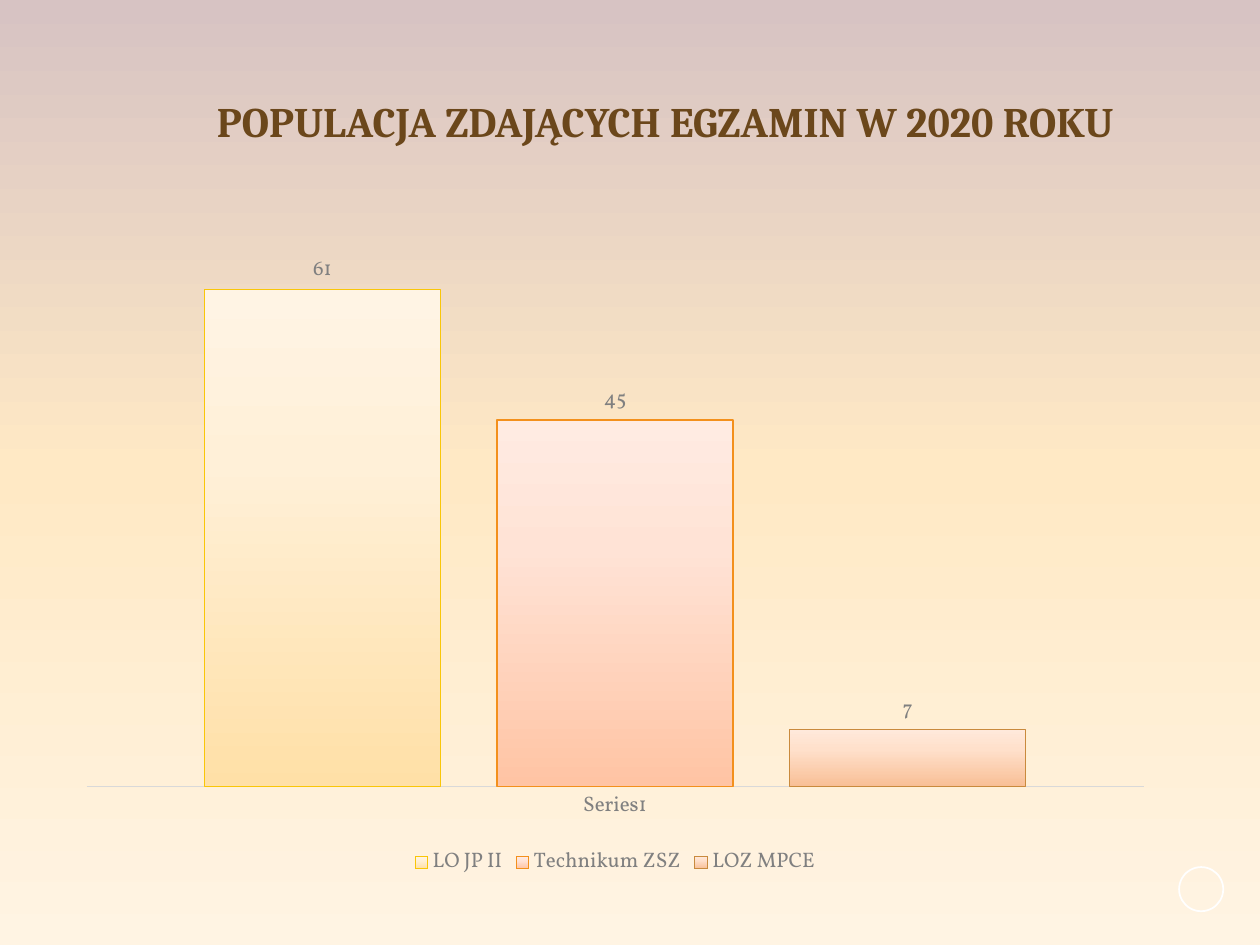
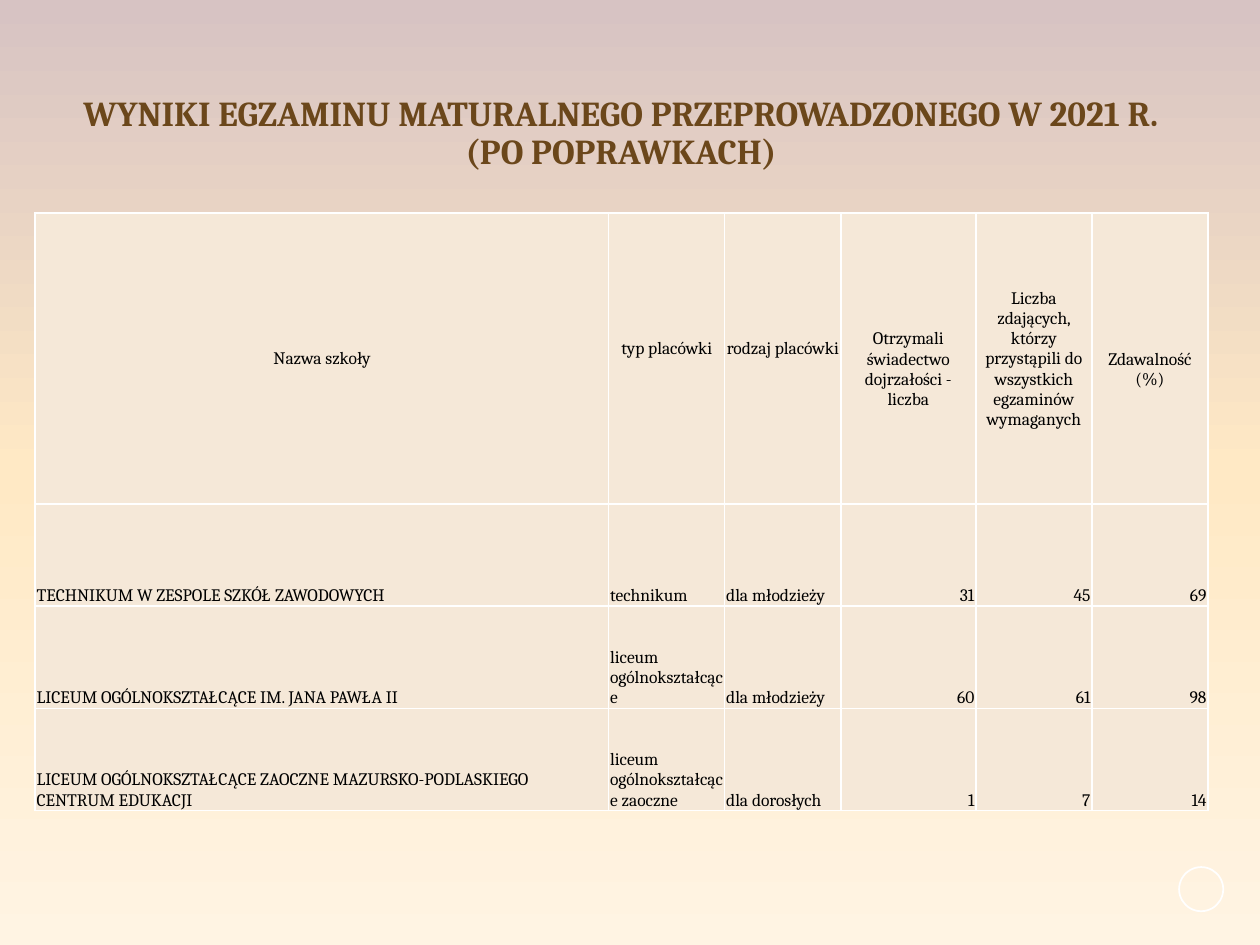
from dataclasses import dataclass

from lxml.etree import SubElement
from pptx import Presentation
from pptx.chart.data import CategoryChartData
from pptx.dml.color import RGBColor
from pptx.enum.chart import XL_CHART_TYPE, XL_LABEL_POSITION, XL_LEGEND_POSITION, XL_TICK_LABEL_POSITION, XL_TICK_MARK
from pptx.enum.shapes import MSO_SHAPE
from pptx.enum.text import MSO_ANCHOR, MSO_AUTO_SIZE, PP_ALIGN
from pptx.oxml.ns import qn
from pptx.util import Cm, Pt

# Shared look
BROWN = RGBColor(0x6B, 0x47, 0x1B)
WHITE = RGBColor(0xFF, 0xFF, 0xFF)
BLACK = RGBColor(0x00, 0x00, 0x00)
GREY = RGBColor(0x80, 0x80, 0x80)
AXIS_GREY = RGBColor(0xD9, 0xD9, 0xD9)
CELL_CREAM = RGBColor(0xF5, 0xE8, 0xD8)
MAUVE = RGBColor(0xD7, 0xC3, 0xC3)
PEACH = RGBColor(0xFF, 0xE9, 0xC5)
CREAM = RGBColor(0xFF, 0xF4, 0xE3)
TEXT_FONT = "Cambria"
CHART_FONT = "Vollkorn"
CELL_MARGIN = Cm(0.03)
LINE_HEIGHT = Cm(0.42)


@dataclass(frozen=True)
class School:
    name: str
    candidates: int
    outline: RGBColor
    shades: tuple[RGBColor, RGBColor, RGBColor]


@dataclass(frozen=True)
class Column:
    heading: str
    width: float
    align: PP_ALIGN
    lines_above: int = 0
    lines_below: int = 0


SCHOOLS = [
    School("LO JP II", 61, RGBColor(0xF9, 0xC6, 0x08),
           (RGBColor(0xFF, 0xE0, 0xA7), RGBColor(0xFF, 0xF0, 0xD8), RGBColor(0xFF, 0xF4, 0xE4))),
    School("Technikum ZSZ", 45, RGBColor(0xF3, 0x90, 0x1C),
           (RGBColor(0xFF, 0xC4, 0xA4), RGBColor(0xFF, 0xE3, 0xD6), RGBColor(0xFF, 0xEB, 0xE2))),
    School("LOZ MPCE", 7, RGBColor(0xC9, 0x8A, 0x3D),
           (RGBColor(0xF8, 0xBF, 0x96), RGBColor(0xFF, 0xE0, 0xCB), RGBColor(0xFF, 0xE9, 0xDB))),
]

COLUMNS = [
    Column("Nazwa szkoły", 11.56, PP_ALIGN.LEFT),
    Column("typ placówki", 2.34, PP_ALIGN.LEFT, lines_below=1),
    Column("rodzaj placówki", 2.34, PP_ALIGN.LEFT, lines_below=1),
    Column("Otrzymali świadectwo dojrzałości - liczba", 2.72, PP_ALIGN.RIGHT, lines_above=1),
    Column("Liczba zdających, którzy przystąpili do wszystkich egzaminów wymaganych",
           2.34, PP_ALIGN.RIGHT),
    Column("Zdawalność (%)", 2.34, PP_ALIGN.RIGHT, lines_above=1),
]

RESULTS = [
    ("TECHNIKUM W ZESPOLE SZKÓŁ ZAWODOWYCH", "technikum", "dla młodzieży", 31, 45, 69),
    ("LICEUM OGÓLNOKSZTAŁCĄCE IM. JANA PAWŁA II", "liceum ogólnokształcące",
     "dla młodzieży", 60, 61, 98),
    ("LICEUM OGÓLNOKSZTAŁCĄCE ZAOCZNE MAZURSKO-PODLASKIEGO CENTRUM EDUKACJI",
     "liceum ogólnokształcące zaoczne", "dla dorosłych", 1, 7, 14),
]


def set_gradient(fill, owner, angle: int, middle: int, shades) -> None:
    """Fill with three shades; the middle one sits at the given percentage."""
    fill.gradient()
    fill.gradient_angle = angle
    stops = next(owner.iter(qn("a:gsLst")))
    for stop in list(stops):
        stops.remove(stop)
    for percent, shade in zip((0, middle, 100), shades):
        stop = SubElement(stops, qn("a:gs"), pos=str(percent * 1000))
        SubElement(stop, qn("a:srgbClr"), val=str(shade))


def style_font(font, name: str, size: int, color: RGBColor, bold: bool = False) -> None:
    font.name = name
    font.size = Pt(size)
    font.bold = bold
    font.color.rgb = color


def add_titled_slide(prs, title_text: str, left: float, top: float, size: int):
    slide = prs.slides.add_slide(prs.slide_layouts[5])
    # Corner ring
    ring = slide.shapes.add_shape(MSO_SHAPE.OVAL, Cm(23.77), Cm(17.48), Cm(0.89), Cm(0.89))
    ring.shadow.inherit = False
    ring.fill.background()
    ring.line.color.rgb = WHITE
    ring.line.width = Pt(1)
    # Title
    title = slide.shapes.title
    title.left, title.top, title.width, title.height = Cm(left), Cm(top), Cm(22.86), Cm(3.18)
    frame = title.text_frame
    frame.text = title_text
    frame.word_wrap = True
    frame.auto_size = MSO_AUTO_SIZE.NONE
    frame.vertical_anchor = MSO_ANCHOR.MIDDLE
    paragraph = frame.paragraphs[0]
    paragraph.alignment = PP_ALIGN.CENTER
    paragraph.line_spacing = 0.9
    style_font(paragraph.font, TEXT_FONT, size, BROWN, bold=True)
    return slide


def add_candidates_chart(slide) -> None:
    data = CategoryChartData()
    data.categories = ["Series1"]
    for school in SCHOOLS:
        data.add_series(school.name, [school.candidates])
    chart = slide.shapes.add_chart(XL_CHART_TYPE.COLUMN_CLUSTERED, Cm(1.3), Cm(4.09),
                                   Cm(22.2), Cm(13.69), data).chart
    style_font(chart.font, CHART_FONT, 12, GREY)
    chart.has_title = False
    chart.has_legend = True
    chart.legend.position = XL_LEGEND_POSITION.BOTTOM
    chart.legend.include_in_layout = False
    style_font(chart.legend.font, CHART_FONT, 12, GREY)

    # Axes
    candidates_axis = chart.value_axis
    candidates_axis.visible = False
    candidates_axis.has_major_gridlines = False
    candidates_axis.minimum_scale = 0
    candidates_axis.maximum_scale = 70
    school_axis = chart.category_axis
    school_axis.major_tick_mark = XL_TICK_MARK.NONE
    school_axis.tick_label_position = XL_TICK_LABEL_POSITION.NEXT_TO_AXIS
    school_axis.format.line.color.rgb = AXIS_GREY
    school_axis.format.line.width = Pt(0.75)
    style_font(school_axis.tick_labels.font, CHART_FONT, 12, GREY)

    # Columns
    plot = chart.plots[0]
    plot.vary_by_categories = False
    plot.gap_width = 100
    plot.overlap = -24
    for school, series in zip(SCHOOLS, plot.series):
        set_gradient(series.format.fill, series._element, 90, 65, school.shades)
        series.format.line.color.rgb = school.outline
        series.format.line.width = Pt(0.75)
        labels = series.data_labels
        labels.show_value = True
        labels.position = XL_LABEL_POSITION.OUTSIDE_END
        style_font(labels.font, CHART_FONT, 12, GREY)


def fill_cell(cell, text: str, align: PP_ALIGN, anchor: MSO_ANCHOR) -> None:
    cell.text = text
    cell.vertical_anchor = anchor
    cell.margin_left = cell.margin_right = cell.margin_top = CELL_MARGIN
    cell.margin_bottom = 0
    paragraph = cell.text_frame.paragraphs[0]
    paragraph.alignment = align
    style_font(paragraph.font, TEXT_FONT, 10, BLACK)
    # White borders
    properties = cell._tc.get_or_add_tcPr()
    for side in ("a:lnL", "a:lnR", "a:lnT", "a:lnB"):
        border = SubElement(properties, qn(side), w=str(Pt(1)))
        SubElement(SubElement(border, qn("a:solidFill")), qn("a:srgbClr"), val=str(WHITE))
    cell.fill.solid()
    cell.fill.fore_color.rgb = CELL_CREAM


def add_results_table(slide) -> None:
    table = slide.shapes.add_table(len(RESULTS) + 1, len(COLUMNS), Cm(0.71), Cm(4.29),
                                   Cm(23.64), Cm(12.05)).table
    table.first_row = False
    table.horz_banding = False
    table.rows[0].height = Cm(5.87)
    for row_number, result in enumerate(RESULTS, start=1):
        table.rows[row_number].height = Cm(2.06)
        for column_number, (column, value) in enumerate(zip(COLUMNS, result)):
            fill_cell(table.cell(row_number, column_number), str(value),
                      column.align, MSO_ANCHOR.BOTTOM)
    # Headings
    for column_number, column in enumerate(COLUMNS):
        table.columns[column_number].width = Cm(column.width)
        heading = table.cell(0, column_number)
        fill_cell(heading, column.heading, PP_ALIGN.CENTER, MSO_ANCHOR.MIDDLE)
        heading.margin_top = CELL_MARGIN + column.lines_above * LINE_HEIGHT
        heading.margin_bottom = column.lines_below * LINE_HEIGHT


def main() -> None:
    prs = Presentation()
    prs.slide_width, prs.slide_height = Cm(25.4), Cm(19.05)
    master = prs.slide_master
    set_gradient(master.background.fill, master.element, 270, 50, (MAUVE, PEACH, CREAM))

    # Candidates in 2020
    candidates_slide = add_titled_slide(
        prs, "POPULACJA ZDAJĄCYCH EGZAMIN W 2020 ROKU", 1.98, 0.91, 24)
    add_candidates_chart(candidates_slide)

    # Results in 2021
    results_slide = add_titled_slide(
        prs, "WYNIKI EGZAMINU MATURALNEGO PRZEPROWADZONEGO W 2021 R.\v(PO POPRAWKACH)",
        1.09, 1.12, 20)
    add_results_table(results_slide)

    prs.save("out.pptx")


if __name__ == "__main__":
    main()
